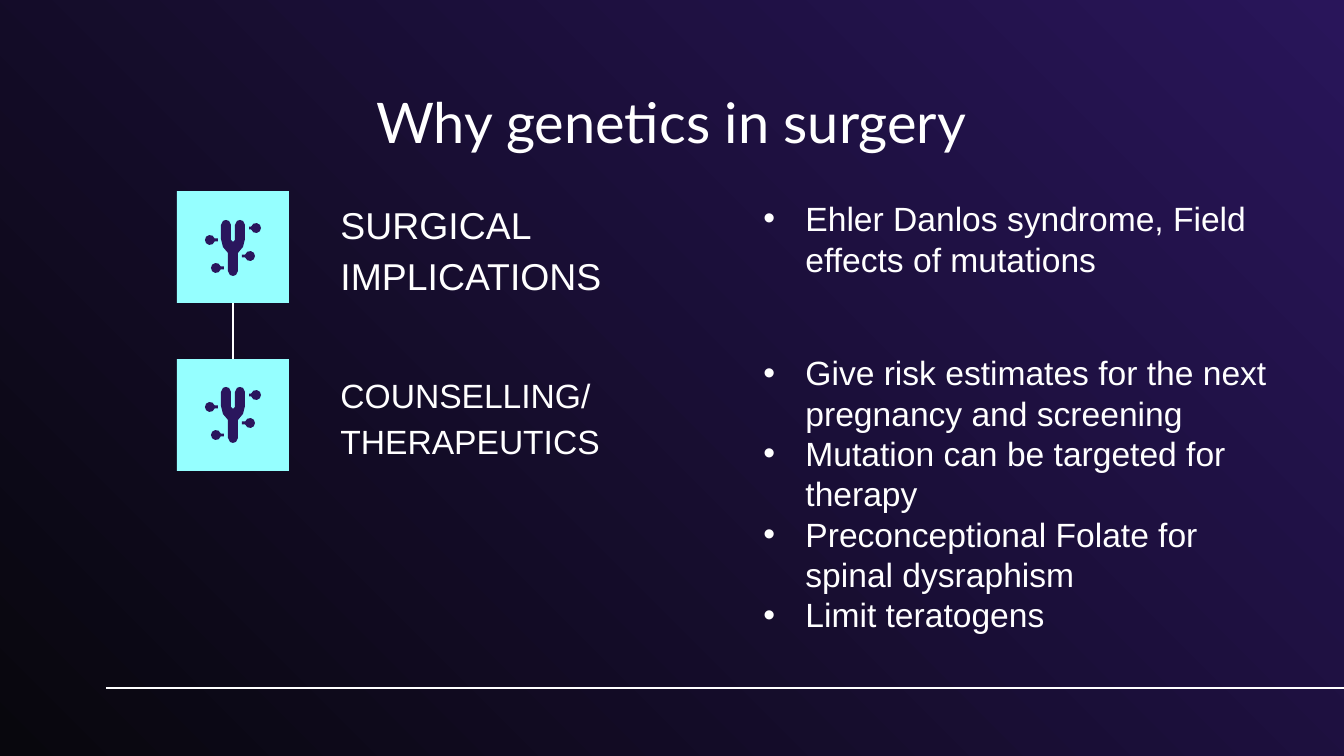
from math import asin, cos, pi, sin

from lxml.etree import SubElement
from pptx import Presentation
from pptx.dml.color import RGBColor
from pptx.enum.shapes import MSO_CONNECTOR, MSO_SHAPE
from pptx.enum.text import MSO_ANCHOR, MSO_AUTO_SIZE, PP_ALIGN
from pptx.oxml.ns import qn
from pptx.util import Pt

# Content
TITLE = "Why genetics in surgery"
TOPICS = [
    {"label": "SURGICAL IMPLICATIONS", "size": 20, "box": (327, 208, 314, 77),
     "points": ["Ehler Danlos syndrome, Field effects of mutations"],
     "points_box": (750, 193, 538, 91), "tile_top": 191, "icon_top": 220},
    {"label": "COUNSELLING/THERAPEUTICS", "size": 18, "box": (327, 376, 305, 78),
     "points": ["Give risk estimates for the next pregnancy and screening",
                "Mutation can be targeted for therapy",
                "Preconceptional Folate for spinal dysraphism",
                "Limit teratogens"],
     "points_box": (750, 418, 539, 151), "tile_top": 359, "icon_top": 387},
]
WHITE, CYAN, INDIGO = "FFFFFF", "95FFFF", "2A165D"
TILE_LEFT, TILE, ICON_LEFT = 177, 112, 205
INSET = Pt(7.2)

# Left half of the icon's fork, from notch to foot
FORK_AXIS = 28
FORK_HALF = [(28, 22), (26, 20), (26, 5), (24, 1), (21, 0), (18, 1), (16, 5),
             (16, 19), (18, 27), (23, 33), (23, 51), (25, 55), (28, 56)]
# Round nodes: centre x, centre y, signed reach of the arm
NODES = [(51, 8, -7), (5, 20, 8), (11, 48, 8), (45, 36, -8)]
NODE_R, ARM_HALF, ARC_STEPS = 5, 1.5, 8


def px(n):
    return round(n * 914400 / 134.4)


def rgb(value):
    return RGBColor.from_string(value)


def apply(obj, values):
    for name, value in values.items():
        setattr(obj, name, value)


def fill_text(sp, box, texts, font, size, bullet=False, **para):
    apply(sp, dict(zip(("left", "top", "width", "height"), map(px, box))))
    tf = sp.text_frame
    apply(tf, {"word_wrap": True, "auto_size": MSO_AUTO_SIZE.NONE,
               "vertical_anchor": MSO_ANCHOR.MIDDLE, "margin_left": INSET,
               "margin_right": INSET, "margin_top": INSET, "margin_bottom": INSET})
    for i, text in enumerate(texts):
        p = tf.add_paragraph() if i else tf.paragraphs[0]
        apply(p, {"alignment": PP_ALIGN.LEFT, "line_spacing": 1.0,
                  "space_before": Pt(0), "space_after": Pt(0), **para})
        r = p.add_run()
        r.text = text
        apply(r.font, {"name": font, "size": Pt(size), "bold": False})
        r.font.color.rgb = rgb(WHITE)
        pPr = p._p.get_or_add_pPr()
        pPr.set("marL", str(px(42) if bullet else 0))
        pPr.set("indent", str(-px(42) if bullet else 0))
        if bullet:
            SubElement(SubElement(pPr, qn("a:buClr")), qn("a:srgbClr"), val=WHITE)
            SubElement(pPr, qn("a:buFont"), typeface="Arial")
            SubElement(pPr, qn("a:buChar"), char="•")
        else:
            SubElement(pPr, qn("a:buNone"))


def paint(shape, color):
    shape.shadow.inherit = False
    shape.fill.solid()
    shape.fill.fore_color.rgb = rgb(color)
    shape.line.fill.background()


def add_line(s, x1, y1, x2, y2):
    ln = s.shapes.add_connector(MSO_CONNECTOR.STRAIGHT, *map(px, (x1, y1, x2, y2)))
    ln.line.color.rgb = rgb(WHITE)
    ln.line.width = Pt(0.75)
    SubElement(ln._element.spPr, qn("a:effectLst"))


def fork_outline():
    return FORK_HALF + [(2 * FORK_AXIS - x, y) for x, y in FORK_HALF[-2:0:-1]]


def node_outline(cx, cy, reach):
    side = 1 if reach > 0 else -1
    gap = asin(ARM_HALF / NODE_R)
    angles = [gap + (2 * pi - 2 * gap) * i / ARC_STEPS for i in range(ARC_STEPS + 1)]
    arc = [(cx + side * NODE_R * cos(a), cy + NODE_R * sin(a)) for a in angles]
    return arc + [(cx + reach, cy - ARM_HALF), (cx + reach, cy + ARM_HALF)]


def add_icon(s, left, top):
    grp = s.shapes.add_group_shape()
    for outline in [fork_outline()] + [node_outline(*n) for n in NODES]:
        pts = [(px(left + x), px(top + y)) for x, y in outline]
        fb = grp.shapes.build_freeform(*pts[0])
        fb.add_line_segments(pts[1:], close=True)
        paint(fb.convert_to_shape(), INDIGO)


prs = Presentation()
prs.slide_width, prs.slide_height = px(1344), px(756)
s = prs.slides.add_slide(prs.slide_layouts.get_by_name("Comparison"))

# Background gradient and bottom rule
bg = s.background.fill
bg.gradient()
bg.gradient_angle = 45
for stop, color in zip(bg.gradient_stops, ("08070D", "29155A")):
    stop.color.rgb = rgb(color)
add_line(s, 106, 688, 1344, 688)

# Title, topic labels and bullet lists
title, *bodies = s.placeholders
fill_text(title, (105, 79, 1133, 84), [TITLE], "Lato", 30, alignment=PP_ALIGN.CENTER)
for topic, label, points in zip(TOPICS, bodies[::2], bodies[1::2]):
    fill_text(label, topic["box"], [topic["label"]], "Arial", topic["size"],
              line_spacing=1.15, space_after=Pt(12))
    fill_text(points, topic["points_box"], topic["points"], "Arial", 18, bullet=True)

# Icon tiles joined by a line
for topic in TOPICS:
    box = (TILE_LEFT, topic["tile_top"], TILE, TILE)
    paint(s.shapes.add_shape(MSO_SHAPE.RECTANGLE, *map(px, box)), CYAN)
    add_icon(s, ICON_LEFT, topic["icon_top"])
middle = TILE_LEFT + TILE // 2
add_line(s, middle, TOPICS[0]["tile_top"] + TILE, middle, TOPICS[1]["tile_top"])

prs.save("out.pptx")
